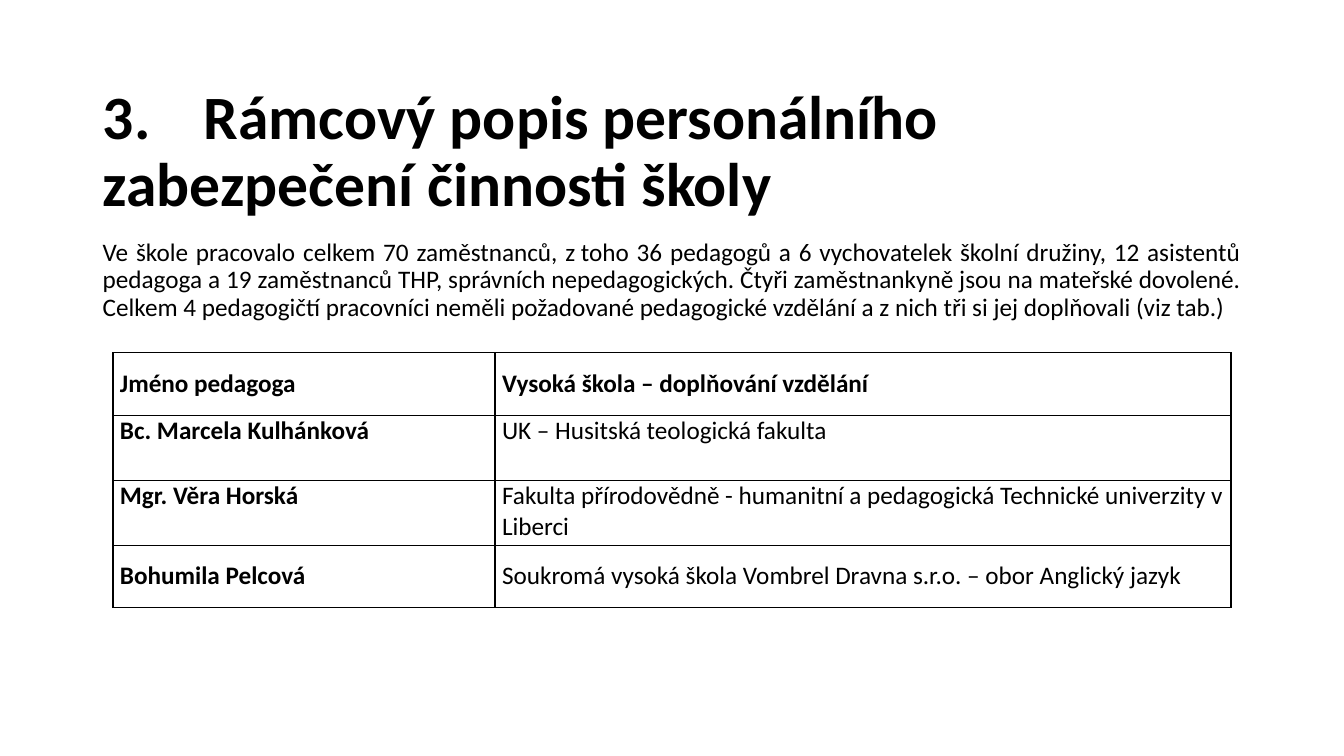
from lxml import etree
from pptx import Presentation
from pptx import util as u
from pptx.dml.color import RGBColor
from pptx.enum import text
from pptx.oxml.ns import qn

COLORS = {"ink": "000000", "paper": "FFFFFF"}
FONT = "Calibri"
WIDTH, HEIGHT = 13.33, 7.5
MARGIN = 0.92
CONTENT_WIDTH = WIDTH - 2 * MARGIN

TITLE = "3. \tRámcový popis personálního zabezpečení činnosti školy"
SUMMARY = (
    "Ve škole pracovalo celkem 70 zaměstnanců, z\u00a0toho 36 pedagogů a 6 vychovatelek "
    "školní družiny, 12 asistentů pedagoga a 19 zaměstnanců THP, správních "
    "nepedagogických. Čtyři zaměstnankyně jsou na mateřské dovolené. Celkem 4 "
    "pedagogičtí pracovníci neměli požadované pedagogické vzdělání a z nich tři si "
    "jej doplňovali (viz tab.)"
)
# Each row: height, whether it is set with wide line spacing, cell texts
STUDIES = [
    (0.62, True, ("Jméno pedagoga", "Vysoká škola – doplňování vzdělání")),
    (0.65, False, ("Bc. Marcela Kulhánková", "UK – Husitská teologická fakulta")),
    (0.64, False, ("Mgr. Věra Horská",
                   "Fakulta přírodovědně - humanitní a pedagogická "
                   "Technické univerzity v Liberci")),
    (0.62, True, ("Bohumila Pelcová",
                  "Soukromá vysoká škola Vombrel Dravna s.r.o. – obor Anglický jazyk")),
]
COLUMN_WIDTHS = (3.79, 7.3)


def inches(box):
    return [u.Inches(value) for value in box]


def write(frame, content, size, bold=False, **paragraph_format):
    """Fill a text frame with one formatted paragraph."""
    paragraph = frame.paragraphs[0]
    for name, value in paragraph_format.items():
        setattr(paragraph, name, value)
    run = paragraph.add_run()
    run.text = content
    for name, value in {"name": FONT, "size": u.Pt(size), "bold": bold}.items():
        setattr(run.font, name, value)
    run.font.color.rgb = RGBColor.from_string(COLORS["ink"])


def add_title(slide, box):
    title = slide.shapes.title
    title.left, title.top, title.width, title.height = inches(box)
    frame = title.text_frame
    frame.auto_size = text.MSO_AUTO_SIZE.NONE
    frame.vertical_anchor = text.MSO_ANCHOR.MIDDLE
    write(frame, TITLE, 44, bold=True, line_spacing=0.9,
          alignment=text.PP_ALIGN.LEFT)


def add_summary(slide, box):
    frame = slide.shapes.add_textbox(*inches(box)).text_frame
    frame.word_wrap = True
    write(frame, SUMMARY, 18, line_spacing=0.9, alignment=text.PP_ALIGN.JUSTIFY)


def add_borders(cell, width=u.Pt(1)):
    properties = cell._tc.get_or_add_tcPr()
    for position, side in enumerate(("a:lnL", "a:lnR", "a:lnT", "a:lnB")):
        line = etree.Element(qn(side), w=str(int(width)))
        fill = etree.SubElement(line, qn("a:solidFill"))
        etree.SubElement(fill, qn("a:srgbClr"), val=COLORS["ink"])
        properties.insert(position, line)


def add_studies_table(slide, box):
    shape = slide.shapes.add_table(len(STUDIES), len(COLUMN_WIDTHS), *inches(box))
    table = shape.table
    for column, width in zip(table.columns, COLUMN_WIDTHS):
        column.width = u.Inches(width)
    cell_format = {"margin_left": u.Inches(0.07), "margin_right": u.Inches(0.07),
                   "margin_top": 0, "margin_bottom": 0}
    for row_index, (height, wide, contents) in enumerate(STUDIES):
        table.rows[row_index].height = u.Inches(height)
        spacing = 1.5 if wide else 1.0
        alignment = text.PP_ALIGN.JUSTIFY if wide else text.PP_ALIGN.LEFT
        for column_index, content in enumerate(contents):
            cell = table.cell(row_index, column_index)
            for name, value in cell_format.items():
                setattr(cell, name, value)
            cell.fill.solid()
            cell.fill.fore_color.rgb = RGBColor.from_string(COLORS["paper"])
            add_borders(cell)
            write(cell.text_frame, content, 18,
                  bold=row_index == 0 or column_index == 0,
                  line_spacing=spacing, alignment=alignment)


def main():
    presentation = Presentation()
    presentation.slide_width, presentation.slide_height = inches((WIDTH, HEIGHT))
    slide = presentation.slides.add_slide(presentation.slide_layouts[5])
    add_title(slide, (MARGIN, 0.71, CONTENT_WIDTH, 1.62))
    add_summary(slide, (MARGIN, 2.33, CONTENT_WIDTH, 1.0))
    table_height = sum(height for height, _, _ in STUDIES)
    add_studies_table(slide, (MARGIN + 0.2, 3.5, sum(COLUMN_WIDTHS), table_height))
    presentation.save("out.pptx")


if __name__ == "__main__":
    main()
